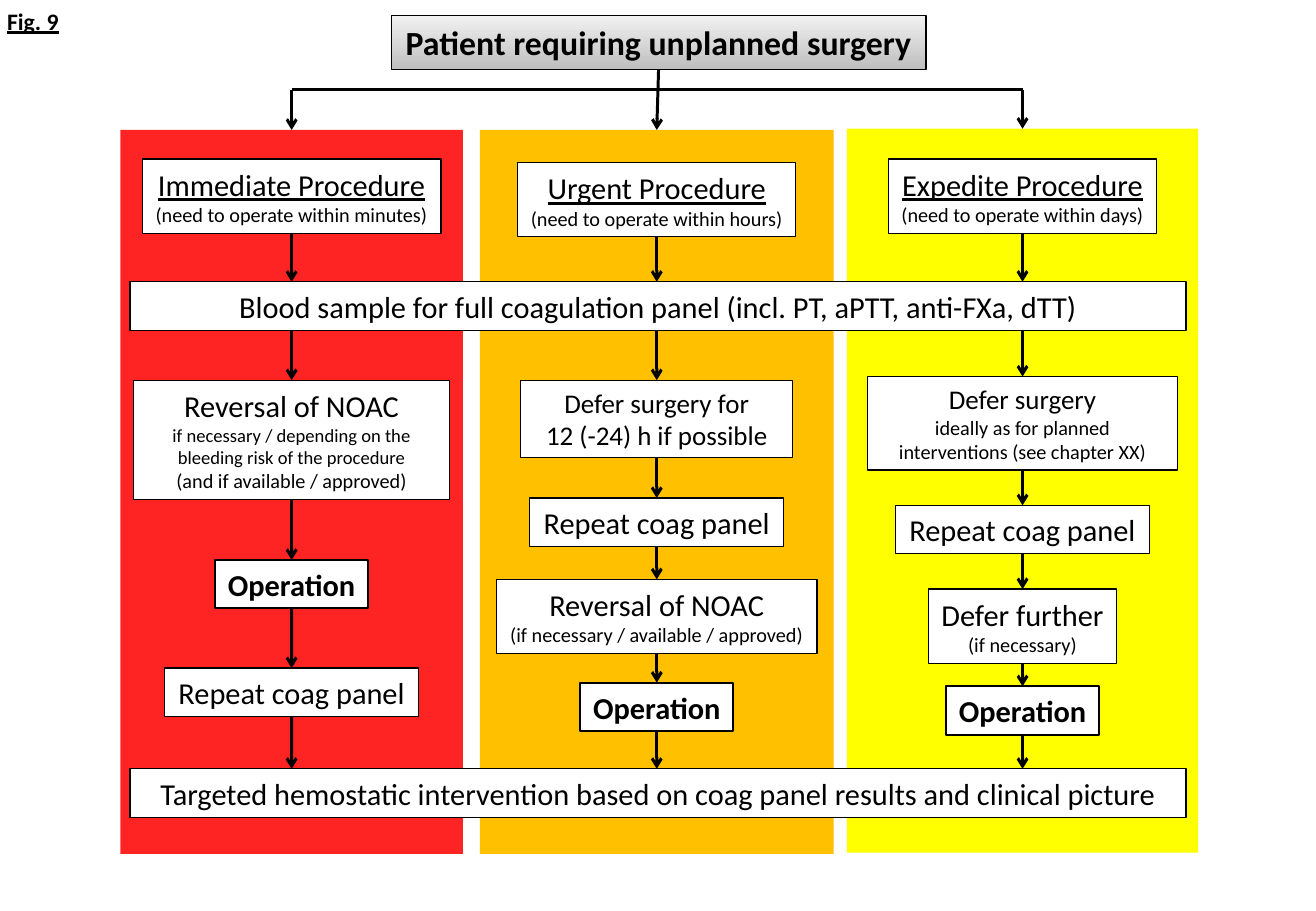
import pptx
import pptx.util
import pptx.dml.color
import pptx.enum.shapes
import pptx.enum.text
import pptx.oxml
import pptx.oxml.ns
import lxml.etree

CELL = 0.1  # grid cell in inches; all lengths below are in cells
FONT = "Calibri"
RECTANGLE = pptx.enum.shapes.MSO_SHAPE.RECTANGLE
STRAIGHT = pptx.enum.shapes.MSO_CONNECTOR.STRAIGHT
TOP, BOTTOM = 0, 2
BAR_LEFT, BAR_WIDTH, BAR_HEIGHT = 10.7, 86.9, 4
BRANCH_ROW = 7.4

# Each line of text is (text, size, style); styles: b bold, u underlined
OPERATION = [("Operation", 18, "b")]
REPEAT = [("Repeat coag panel", 18, "")]
REVERSAL = ("Reversal of NOAC", 18, "")


def heading(name, limit):
    return [(f"{name} Procedure", 18, "u"), (f"(need to operate within {limit})", 12, "")]


# Panels: box, colour, and steps as (row below panel top, width, height, lines)
PANELS = [
    ((9.9, 10.7, 28.2, 59.6), "FF2424", [
        (2.4, 24.6, 6.1, heading("Immediate", "minutes")),
        (20.6, 26, 9.8, [REVERSAL,
                         ("if necessary / depending on the bleeding risk of the procedure", 11, ""),
                         ("(and if available / approved)", 12, "")]),
        (35.4, 12.6, 4, OPERATION),
        (44.3, 20.9, 4, REPEAT)]),
    ((39.5, 10.7, 29.1, 59.6), "FFC000", [
        (2.7, 22.9, 6.1, heading("Urgent", "hours")),
        (20.6, 22.4, 6.4, [("Defer surgery for", 16, ""), ("12 (-24) h if possible", 16, "")]),
        (30.3, 20.9, 4, REPEAT),
        (37, 26.4, 6.1, [REVERSAL, ("(if necessary / available / approved)", 12, "")]),
        (45.5, 12.6, 4, OPERATION)]),
    ((69.7, 10.6, 28.9, 59.6), "FFFF00", [
        (2.5, 22.1, 6.1, heading("Expedite", "days")),
        (20.4, 25.5, 7.7, [("Defer surgery", 16, ""),
                           ("ideally as for planned interventions (see chapter XX)", 12, "")]),
        (31, 20.9, 4, REPEAT),
        (37.9, 15.5, 6.1, [("Defer further", 18, ""), ("(if necessary)", 12, "")]),
        (45.9, 12.6, 4, OPERATION)]),
]


def cells(count):
    return pptx.util.Inches(count * CELL)


def colour(value):
    return pptx.dml.color.RGBColor.from_string(value)


def write(shape, lines, centred=True, wrap=False):
    frame = shape.text_frame
    frame.text = "\n".join(text for text, size, style in lines)
    frame.word_wrap = wrap
    frame.vertical_anchor = pptx.enum.text.MSO_ANCHOR.MIDDLE
    align = pptx.enum.text.PP_ALIGN
    for paragraph, (text, size, style) in zip(frame.paragraphs, lines):
        paragraph.alignment = align.CENTER if centred else align.LEFT
        font = paragraph.runs[0].font
        font.name, font.size = FONT, pptx.util.Pt(size)
        font.bold, font.underline = "b" in style, "u" in style
        font.color.rgb = colour("000000")


def outline(line, width):
    line.color.rgb = colour("000000")
    line.width = pptx.util.Pt(width)


def add_rectangle(slide, box, fill):
    shape = slide.shapes.add_shape(RECTANGLE, *map(cells, box))
    shape.shadow.inherit = False
    shape.fill.solid()
    shape.fill.fore_color.rgb = colour(fill)
    shape.line.fill.background()
    return shape


def add_box(slide, box, lines):
    shape = add_rectangle(slide, box, "FFFFFF")
    outline(shape.line, 1.25 if lines is OPERATION else 0.75)
    # Only small print longer than its box has to wrap
    write(shape, lines, wrap=any(size < 14 and len(text) > 40 for text, size, style in lines))
    return shape


def add_line(slide, start, end, source=None, target=None, arrow=True):
    """Draw a line in slide units, joined to source and target where given."""
    connector = slide.shapes.add_connector(STRAIGHT, *start, *end)
    if source is not None:
        connector.begin_connect(source, BOTTOM)
    if target is not None:
        connector.end_connect(target, TOP)
    outline(connector.line, 1.75)
    if arrow:
        head = lxml.etree.SubElement(connector.line._get_or_add_ln(), pptx.oxml.ns.qn("a:tailEnd"))
        head.set("type", "arrow")
    lxml.etree.SubElement(connector._element.spPr, pptx.oxml.ns.qn("a:effectLst"))


def middle(shape):
    return shape.left + shape.width // 2


def add_title(slide, box):
    title = slide.shapes.title
    title.left, title.top, title.width, title.height = map(cells, box)
    write(title, [("Patient requiring unplanned surgery", 20, "b")])
    title.fill.gradient()
    title.fill.gradient_angle = 270
    for stop, shade in zip(title.fill.gradient_stops, ("F1F1F1", "BFBFBF")):
        stop.color.rgb = colour(shade)
    outline(title.line, 0.75)
    return title


def add_bar(slide, row, text):
    return add_box(slide, (BAR_LEFT, row, BAR_WIDTH, BAR_HEIGHT), [(text, 18, "")])


def add_steps(slide, box, steps, sample_bar, result_bar):
    """Stack the steps on the panel's centre line and link them through the bars."""
    left, top, width, height = box
    centre = left + width / 2
    shapes = [add_box(slide, (centre - step_width / 2, top + row, step_width, step_height), lines)
              for row, step_width, step_height, lines in steps]
    chain = [shapes[0], sample_bar, *shapes[1:], result_bar]
    bars = (sample_bar, result_bar)
    for upper, lower in zip(chain, chain[1:]):
        add_line(slide, (cells(centre), upper.top + upper.height), (cells(centre), lower.top),
                 None if upper in bars else upper, None if lower in bars else lower)


def add_branches(slide, title, panels):
    """Split the flow from the title to the top of each panel."""
    row = cells(BRANCH_ROW)
    first, central, last = panels
    add_line(slide, (middle(title), title.top + title.height),
             (middle(central), central.top), title, central)
    add_line(slide, (middle(first), row), (middle(last), row), arrow=False)
    for panel in (first, last):
        add_line(slide, (middle(panel), row), (middle(panel), panel.top), target=panel)


def main():
    presentation = pptx.Presentation()
    presentation.slide_width = pptx.util.Inches(10.83)
    presentation.slide_height = pptx.util.Inches(7.5)
    slide = presentation.slides.add_slide(presentation.slide_layouts[5])

    # Title and figure label
    title = add_title(slide, (32.2, 1.3, 44, 4.4))
    label = slide.shapes.add_textbox(*map(cells, (-0.4, 0, 6.3, 3.4)))
    write(label, [("Fig. 9", 14, "bu")], centred=False)

    # Coloured panels with the two shared bars across them
    panels = [add_rectangle(slide, box, fill) for box, fill, steps in PANELS]
    sample_bar = add_bar(
        slide, 23.2, "Blood sample for full coagulation panel (incl. PT, aPTT, anti-FXa, dTT)")
    result_bar = add_bar(
        slide, 63.3,
        "Targeted hemostatic intervention based on coag panel results and clinical picture")

    # Steps and arrows
    for box, fill, steps in PANELS:
        add_steps(slide, box, steps, sample_bar, result_bar)
    add_branches(slide, title, panels)
    presentation.save("out.pptx")


if __name__ == "__main__":
    main()
